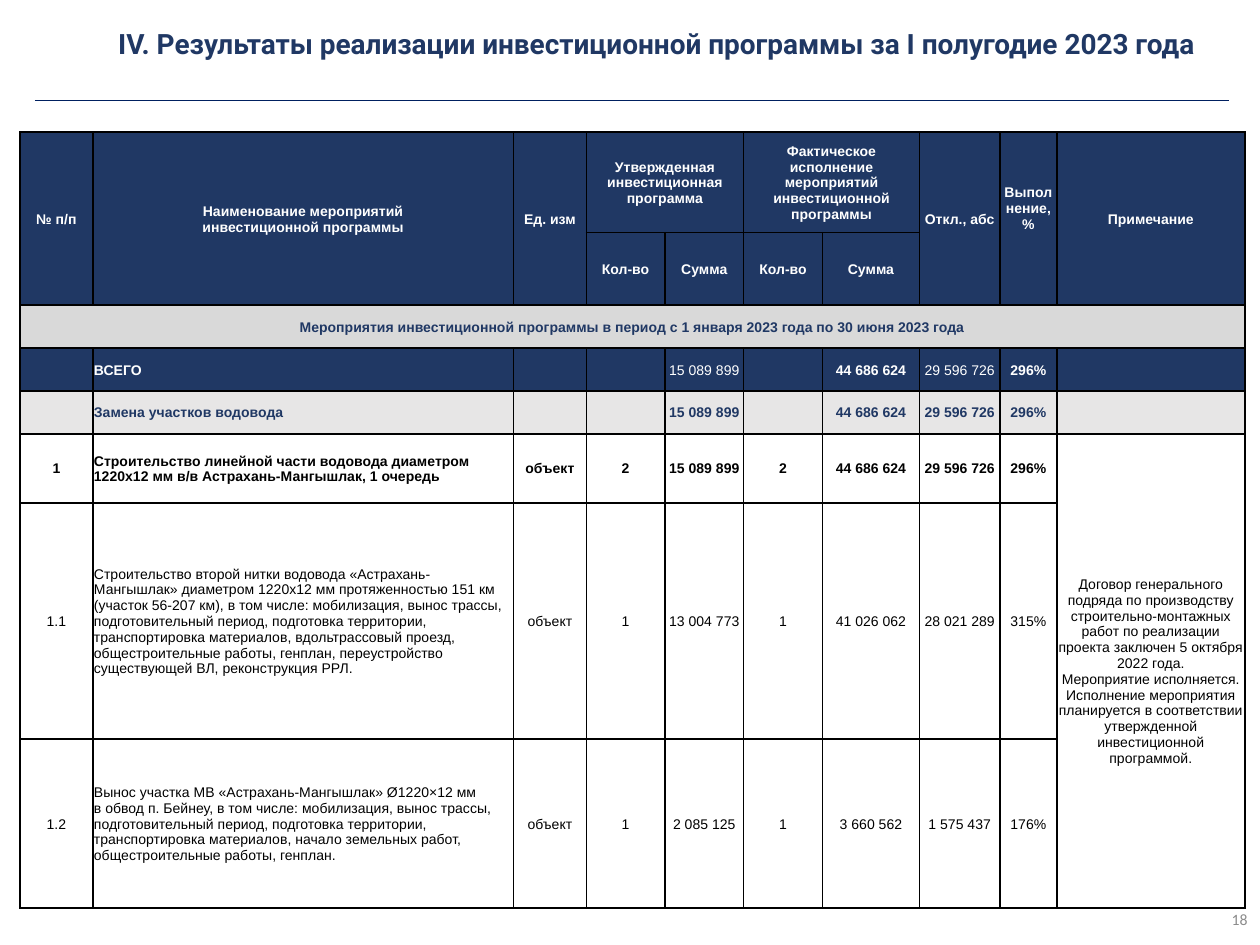
from lxml import etree
from pptx import Presentation
from pptx.dml.color import RGBColor
from pptx.enum.shapes import MSO_CONNECTOR
from pptx.enum.text import MSO_ANCHOR, PP_ALIGN
from pptx.oxml.ns import qn
from pptx.util import Pt

LEFT, CENTER, RIGHT = PP_ALIGN.LEFT, PP_ALIGN.CENTER, PP_ALIGN.RIGHT
MIDDLE = MSO_ANCHOR.MIDDLE
STRAIGHT = MSO_CONNECTOR.STRAIGHT
NAVY, WHITE, BLACK = "203864", "FFFFFF", "000000"


def color(value):
    return RGBColor.from_string(value)


def write(frame, text, font, size, shade, bold, align):
    frame.text = text
    frame.word_wrap = True
    for para in frame.paragraphs:
        para.alignment = align
        for name, value in {"name": font, "size": Pt(size), "bold": bold}.items():
            setattr(para.font, name, value)
        para.font.color.rgb = color(shade)
        for span in para.runs:
            for name, value in {"name": font, "size": Pt(size), "bold": bold}.items():
                setattr(span.font, name, value)
            span.font.color.rgb = color(shade)


deck = Presentation()
deck.slide_width, deck.slide_height = Pt(720), Pt(540)
page = deck.slides.add_slide(deck.slide_layouts[6])

# Title and page number
texts = [
    (60.5, 10, 659.5, 30,
     "IV. Результаты реализации инвестиционной программы за I полугодие 2023 года",
     "Roboto", 16, NAVY, True, LEFT),
    (558, 511, 162, 29, "18", "Calibri", 9, "8C8C8C", False, RIGHT),
]
for left, top, width, height, *content in texts:
    box = page.shapes.add_textbox(Pt(left), Pt(top), Pt(width), Pt(height))
    box.text_frame.vertical_anchor = MIDDLE
    write(box.text_frame, *content)

# Rule under the title
rule = page.shapes.add_connector(STRAIGHT, Pt(20), Pt(57.5), Pt(702), Pt(57.5))
rule.line.color.rgb = color("002060")
rule.line.width = Pt(1)
etree.SubElement(rule.element.spPr, qn("a:effectLst"))

# Table contents: \n starts a paragraph, \v breaks a line
note = ("Договор генерального подряда по производству строительно-монтажных работ "
        "по реализации проекта заключен 5 октября 2022 года.\vМероприятие исполняется.\v"
        "Исполнение мероприятия планируется в соответствии утвержденной "
        "инвестиционной программой.")
second_line = ("Строительство второй нитки водовода «Астрахань-\vМангышлак» диаметром "
               "1220х12 мм протяженностью 151 км (участок 56-207 км), в том числе: "
               "мобилизация, вынос трассы, подготовительный период, подготовка территории, "
               "транспортировка материалов, вдольтрассовый проезд, общестроительные работы, "
               "генплан, переустройство существующей ВЛ, реконструкция РРЛ.")
bypass = ("Вынос участка МВ «Астрахань-Мангышлак» Ø1220×12 мм\vв обвод п. Бейнеу, "
          "в том числе: мобилизация, вынос трассы, подготовительный период, подготовка "
          "территории, транспортировка материалов, начало земельных работ, "
          "общестроительные работы, генплан.")
totals = ["", "", "15 089 899", "", "44 686 624", "29 596 726", "296%", ""]

# Row height, fill, text colour, bold, cell texts
rows = [
    (57.5, NAVY, WHITE, True,
     ["№ п/п", "Наименование мероприятий\nинвестиционной программы", "Ед. изм",
      "Утвержденная инвестиционная программа", "",
      "Фактическое исполнение мероприятий инвестиционной программы", "",
      "Откл., абс", "Выполнение,\n%", "Примечание"]),
    (39.5, NAVY, WHITE, True,
     ["", "", "", "Кол-во", "Сумма", "Кол-во", "Сумма", "", "", ""]),
    (24.5, "D9D9D9", NAVY, True,
     ["Мероприятия инвестиционной программы в период с 1 января 2023 года "
      "по 30 июня 2023 года"] + [""] * 9),
    (24.5, NAVY, WHITE, True, ["", "ВСЕГО"] + totals),
    (24.5, "E7E6E6", NAVY, True, ["", "Замена участков водовода"] + totals),
    (39.5, WHITE, BLACK, True,
     ["1", "Строительство линейной части водовода диаметром 1220х12 мм в/в "
      "Астрахань-Мангышлак, 1 очередь", "объект", "2", "15 089 899", "2",
      "44 686 624", "29 596 726", "296%", note]),
    (135, WHITE, BLACK, False,
     ["1.1", second_line, "объект", "1", "13 004 773", "1", "41 026 062",
      "28 021 289", "315%", ""]),
    (96.5, WHITE, BLACK, False,
     ["1.2", bypass, "объект", "1", "2 085 125", "1", "3 660 562",
      "1 575 437", "176%", ""]),
]
widths = [41.5, 240.5, 41.5, 45, 45, 45, 55.5, 46, 32.5, 107.5]
plain_cells = {(3, 4), (3, 7), (5, 9)}

# Table grid
holder = page.shapes.add_table(len(rows), len(widths), Pt(11.5), Pt(75.5),
                               Pt(sum(widths)), Pt(sum(row[0] for row in rows)))
table = holder.table
table.first_row = table.horz_banding = False
for column, width in zip(table.columns, widths):
    column.width = Pt(width)

# Cells
margins = {"margin_left": Pt(0.7), "margin_right": Pt(0.7),
           "margin_top": Pt(0.7), "margin_bottom": Pt(0), "vertical_anchor": MIDDLE}
for r, (height, fill, shade, bold, labels) in enumerate(rows):
    table.rows[r].height = Pt(height)
    for c, label in enumerate(labels):
        cell = table.cell(r, c)
        for name, value in margins.items():
            setattr(cell, name, value)
        align = LEFT if c == 1 and r > 2 else CENTER
        write(cell.text_frame, label, "Arial", 8, shade,
              bold and (r, c) not in plain_cells, align)
        properties = cell._tc.get_or_add_tcPr()
        for side in ("a:lnL", "a:lnR", "a:lnT", "a:lnB"):
            border = etree.SubElement(properties, qn(side), w=str(Pt(1)))
            paint = etree.SubElement(border, qn("a:solidFill"))
            etree.SubElement(paint, qn("a:srgbClr"), val=BLACK)
        cell.fill.solid()
        cell.fill.fore_color.rgb = color(fill)
table.cell(0, 8).margin_bottom = Pt(12)

# Merged cells: first row, first column, last row, last column
merges = [(0, c, 1, c) for c in (0, 1, 2, 7, 8, 9)]
merges += [(0, 3, 0, 4), (0, 5, 0, 6), (2, 0, 2, 9), (5, 9, 7, 9)]
for top, left, bottom, right in merges:
    table.cell(top, left).merge(table.cell(bottom, right))

deck.save("out.pptx")
